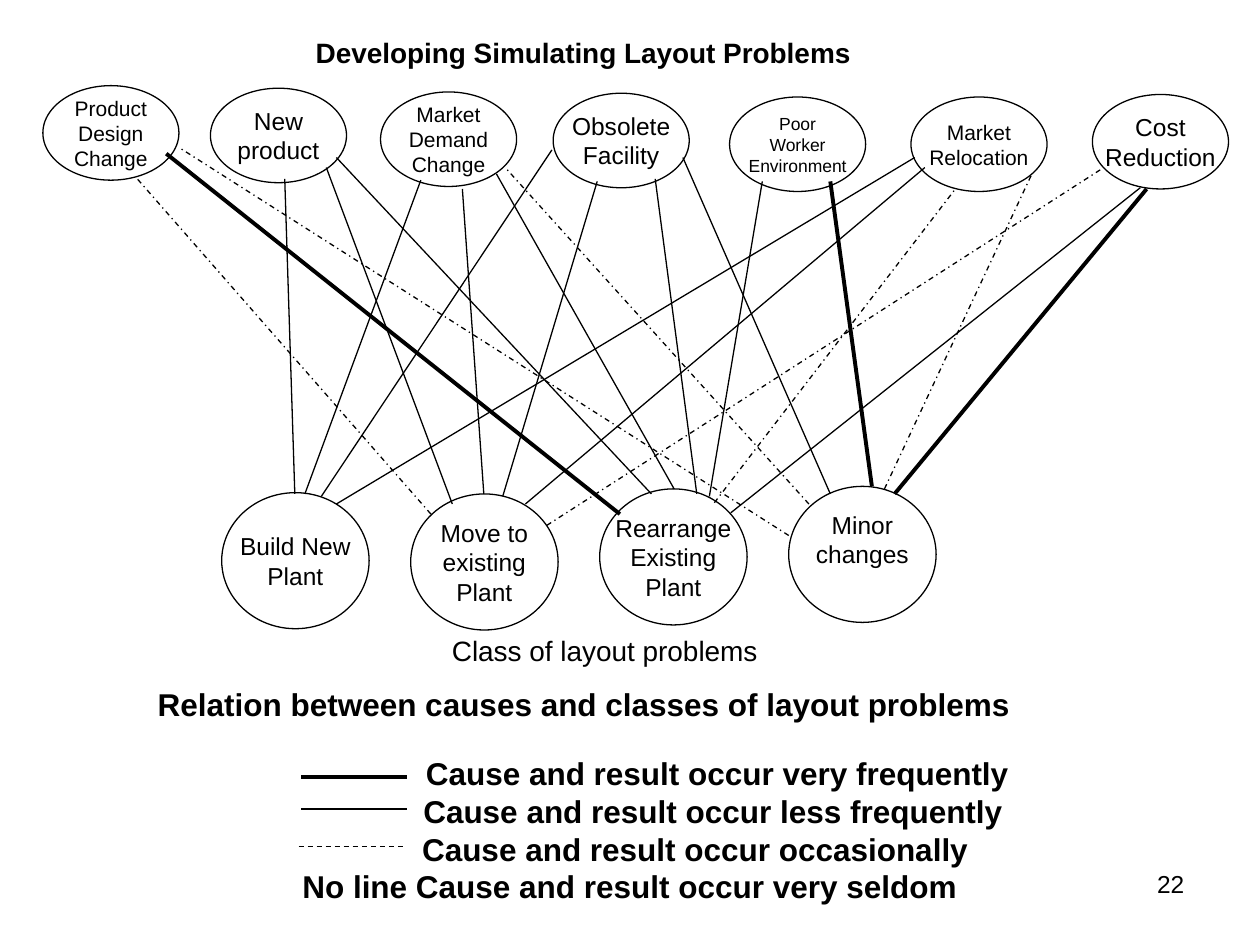
import pptx
import pptx.util
import pptx.dml.color
import pptx.enum.dml
import pptx.enum.shapes
import pptx.enum.text
from lxml import etree

Inches, Pt = pptx.util.Inches, pptx.util.Pt
ALIGN = pptx.enum.text.PP_ALIGN
ANCHOR = pptx.enum.text.MSO_ANCHOR
DASH = pptx.enum.dml.MSO_LINE
COLORS = {"ink": "000000", "paper": "FFFFFF"}
STYLES = {
    "often": (2.25, None),
    "less": (0.75, None),
    "rare": (0.75, DASH.DASH_DOT),
    "key": (0.75, DASH.DASH),
}
CAUSES = [
    (0.34, 0.68, 12, "Product\nDesign\nChange"),
    (1.67, 0.70, 14, "New\nproduct"),
    (3.02, 0.73, 12, "Market\nDemand\nChange"),
    (4.39, 0.74, 14, "Obsolete\nFacility"),
    (5.79, 0.77, 10, "Poor\nWorker\nEnvironment"),
    (7.23, 0.77, 12, "Market\nRelocation"),
    (8.67, 0.75, 14, "Cost\nReduction"),
]
CLASSES = [
    (3.91, 0, "Build New\nPlant"),
    (3.92, 0, "Move to\nexisting\nPlant"),
    (3.88, 0, "Rearrange\nExisting\nPlant"),
    (3.86, 0.24, "Minor\nchanges"),
]
RELATIONS = {
    "often": [
        (4.92, 4.08, 1.32, 1.22), (7.10, 3.92, 9.10, 1.50), (6.92, 3.86, 6.59, 1.44),
    ],
    "less": [
        (2.34, 3.92, 2.26, 1.42), (2.42, 3.92, 3.34, 1.43), (2.55, 3.94, 4.38, 1.19),
        (2.67, 4.00, 7.26, 1.25), (3.59, 4.00, 2.59, 1.33), (3.84, 3.92, 3.67, 1.50),
        (3.99, 3.94, 4.74, 1.44), (4.17, 4.00, 7.34, 1.33), (5.17, 3.92, 2.67, 1.25),
        (5.35, 3.88, 3.94, 1.38), (5.53, 3.92, 5.20, 1.42), (5.63, 3.94, 6.05, 1.44),
        (5.80, 4.07, 9.05, 1.49), (6.59, 3.92, 5.42, 1.25),
    ],
    "rare": [
        (3.42, 4.08, 1.09, 1.42), (4.34, 4.17, 8.76, 1.33), (5.67, 3.99, 7.59, 1.49),
        (7.02, 3.88, 8.19, 1.38), (6.42, 4.00, 4.01, 1.33), (6.26, 4.25, 1.42, 1.17),
    ],
}
LEGEND = [
    (0.98, "Cause and result occur very frequently"),
    (0.96, "Cause and result occur less frequently"),
    (0.95, "Cause and result occur occasionally"),
    (0, "No line Cause and result occur very seldom"),
]
LEGEND_LINES = [("often", -0.01, 0.25), ("less", -0.01, 0.5), ("key", -0.03, 0.8)]


def color(name):
    return pptx.dml.color.RGBColor.from_string(COLORS[name])


def write(sp, text, size, bold=False, align=ALIGN.CENTER, wrap=False, bottom=0):
    tf = sp.text_frame
    tf.text = text
    tf.word_wrap = wrap
    tf.vertical_anchor = ANCHOR.MIDDLE
    tf.margin_left = tf.margin_right = tf.margin_top = 0
    tf.margin_bottom = Inches(bottom)
    for p in tf.paragraphs:
        p.alignment = align
        p.font.name = "Arial"
        p.font.size = Pt(size)
        p.font.bold = bold
        p.font.color.rgb = color("ink")
    return tf


def add_text(s, box, text, size, **options):
    return write(s.shapes.add_textbox(*map(Inches, box)), text, size, **options)


def add_oval(s, box, text, size, bottom=0):
    sp = s.shapes.add_shape(pptx.enum.shapes.MSO_SHAPE.OVAL, *map(Inches, box))
    sp.shadow.inherit = False
    sp.fill.background()
    sp.line.color.rgb = color("ink")
    sp.line.width = Pt(0.75)
    write(sp, text, size, bottom=bottom)


def add_line(s, ends, style):
    width, dash = STYLES[style]
    line = s.shapes.add_connector(
        pptx.enum.shapes.MSO_CONNECTOR.STRAIGHT, *map(Inches, ends))
    line.line.color.rgb = color("ink")
    line.line.width = Pt(width)
    if dash:
        line.line.dash_style = dash
    etree.SubElement(line._element.spPr, pptx.oxml.ns.qn("a:effectLst"))


def add_diagram(s, left, top):
    for x, y, size, text in CAUSES:
        add_oval(s, (left + x, top + y, 1.08, 0.75), text, size)
    for i, (y, bottom, text) in enumerate(CLASSES):
        add_oval(s, (left + 1.76 + 1.5 * i, top + y, 1.17, 1.08), text, 14, bottom)
    for style, lines in RELATIONS.items():
        for x1, y1, x2, y2 in lines:
            add_line(s, (left + x1, top + y1, left + x2, top + y2), style)


def add_legend(s, left, top, width, height):
    text = "\n".join(label for _, label in LEGEND)
    tf = add_text(s, (left, top, width, height), text, 18,
                  bold=True, align=ALIGN.LEFT, wrap=True)
    for p, (indent, _) in zip(tf.paragraphs, LEGEND):
        p._p.get_or_add_pPr().set("marL", str(Inches(indent)))
    for style, dx, dy in LEGEND_LINES:
        add_line(s, (left + dx, top + dy, left + dx + 0.84, top + dy), style)


def main():
    prs = pptx.Presentation()
    prs.slide_width, prs.slide_height = Inches(10), Inches(7.5)
    s = prs.slides.add_slide(prs.slide_layouts[6])
    s.background.fill.solid()
    s.background.fill.fore_color.rgb = color("paper")
    add_text(s, (1.92, 0.25, 5.42, 0.33), "Developing Simulating Layout Problems", 16, bold=True)
    add_diagram(s, 0, 0)
    add_text(s, (2.09, 5.08, 5.42, 0.17), "Class of layout problems", 16)
    add_text(s, (1.01, 5.42, 7.25, 0.33),
             "Relation between causes and classes of layout problems", 18, bold=True)
    add_legend(s, 2.4, 5.92, 5.9, 1.33)
    add_text(s, (7.17, 6.88, 2.23, 0.26), "22", 14, align=ALIGN.RIGHT, wrap=True)
    prs.save("out.pptx")


if __name__ == "__main__":
    main()
